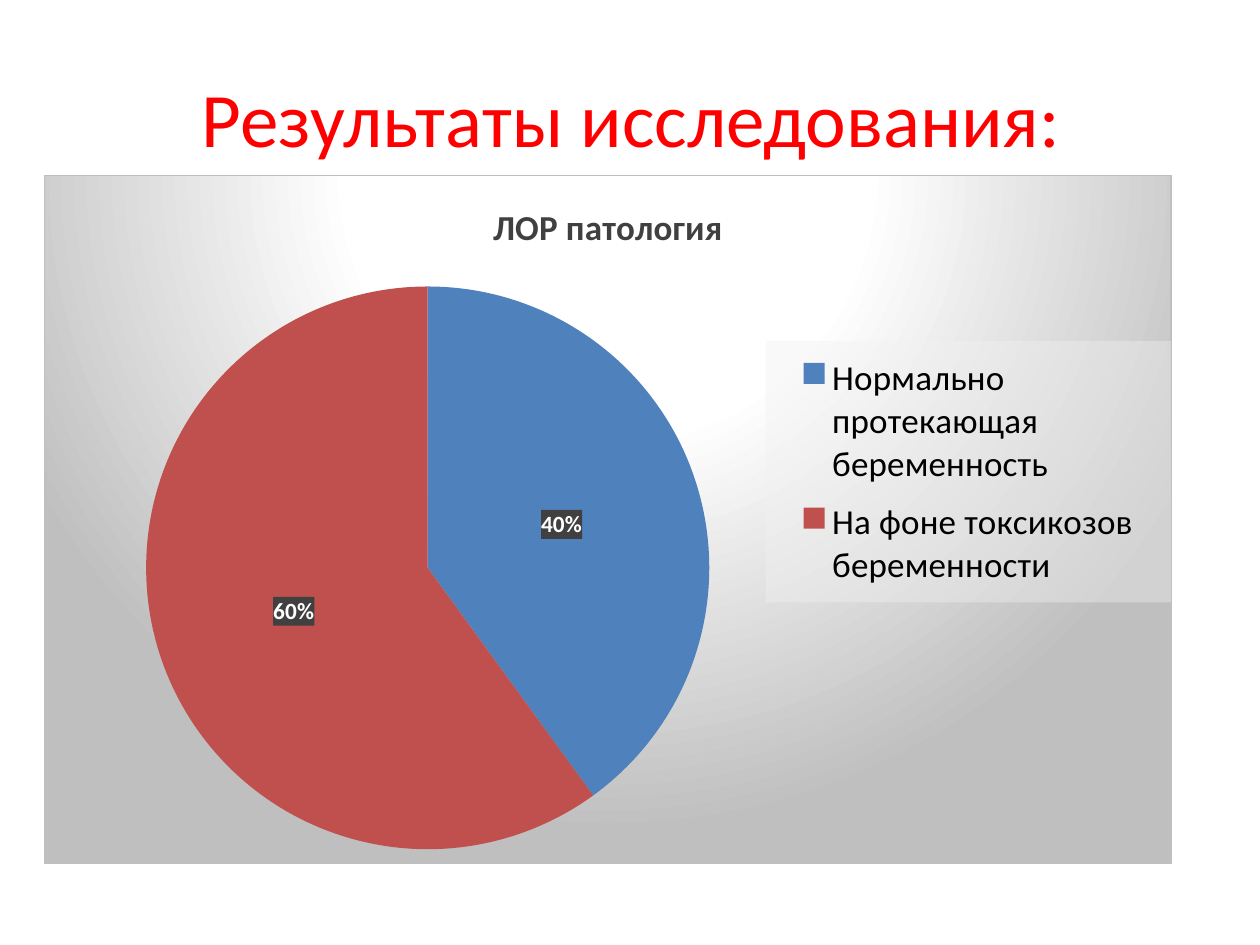
from lxml import etree
from pptx import Presentation
from pptx.chart.data import CategoryChartData
from pptx.dml.color import RGBColor
from pptx.enum.chart import XL_CHART_TYPE, XL_LABEL_POSITION as LabelPosition, XL_LEGEND_POSITION as LegendPosition
from pptx.enum.text import MSO_ANCHOR, PP_ALIGN
from pptx.oxml import parse_xml
from pptx.util import Inches, Pt

FONT = "Calibri"
NAMESPACES = (
    'xmlns:c="http://schemas.openxmlformats.org/drawingml/2006/chart" '
    'xmlns:a="http://schemas.openxmlformats.org/drawingml/2006/main"'
)


def color(hex_value):
    return RGBColor.from_string(hex_value)


def set_font(font, size, hex_value, bold=False):
    font.name = FONT
    font.size = Pt(size)
    font.bold = bold
    font.color.rgb = color(hex_value)


def chart_format(content):
    return parse_xml(f"<c:spPr {NAMESPACES}>{content}</c:spPr>")


def solid_fill(hex_value, alpha):
    return (f'<a:solidFill><a:srgbClr val="{hex_value}">'
            f'<a:alpha val="{alpha * 1000}"/></a:srgbClr></a:solidFill>')


def manual_layout(x, y, width, height, inner=False):
    """Place a chart part by fractions of the chart area."""
    target = '<c:layoutTarget val="inner"/>' if inner else ""
    sizes = "".join(f'<c:{name} val="{value}"/>' for name, value in
                    zip("xywh", (x, y, width, height)))
    return parse_xml(
        f'<c:layout {NAMESPACES}><c:manualLayout>{target}'
        f'<c:xMode val="edge"/><c:yMode val="edge"/>{sizes}'
        f'</c:manualLayout></c:layout>')


def add_title(slide, left, top, width, height):
    title = slide.shapes.title
    title.left, title.top, title.width, title.height = left, top, width, height
    title.text_frame.text = "Результаты исследования:"
    title.text_frame.vertical_anchor = MSO_ANCHOR.MIDDLE
    paragraph = title.text_frame.paragraphs[0]
    paragraph.alignment = PP_ALIGN.CENTER
    set_font(paragraph.runs[0].font, 44, "FF0000")


def format_chart_area(chart):
    """Radial grey background with a thin border."""
    stops = "".join(
        f'<a:gs pos="{position * 1000}"><a:srgbClr val="{hex_value}"/></a:gs>'
        for position, hex_value in ((0, "FFFFFF"), (39, "FFFFFF"), (100, "BFBFBF")))
    area = chart_format(
        f'<a:gradFill><a:gsLst>{stops}</a:gsLst><a:path path="circle">'
        '<a:fillToRect l="50000" t="-80000" r="50000" b="180000"/></a:path></a:gradFill>'
        f'<a:ln w="{Pt(0.75)}"><a:solidFill><a:srgbClr val="BFBFBF"/></a:solidFill></a:ln>')
    chart.element.find("{*}chart").addnext(area)


def format_legend(chart):
    chart.has_legend = True
    legend = chart.legend
    legend.position = LegendPosition.RIGHT
    legend.include_in_layout = False
    set_font(legend.font, 20, "000000")
    legend_element = chart.element.find(".//{*}legend")
    for layout in legend_element.findall("{*}layout"):
        legend_element.remove(layout)
    overlay = legend_element.find("{*}overlay")
    overlay.addprevious(manual_layout(0.64, 0.24, 0.36, 0.38))
    overlay.addnext(chart_format(solid_fill("F2F2F2", 39)))


def format_pie(chart):
    plot = chart.plots[0]
    plot.vary_by_categories = True
    for index, hex_value in enumerate(("4F81BD", "C0504D")):
        fill = plot.series[0].points[index].format.fill
        fill.solid()
        fill.fore_color.rgb = color(hex_value)

    # Percentage labels on dark boxes
    labels = plot.series[0].data_labels
    labels.show_percentage = True
    labels.show_value = False
    labels.number_format = "0%"
    labels.number_format_is_linked = False
    labels.position = LabelPosition.CENTER
    set_font(labels.font, 13.3, "FFFFFF", bold=True)
    label_format = chart.element.find(".//{*}ser/{*}dLbls/{*}numFmt")
    label_format.addnext(chart_format(solid_fill("404040", 90)))

    plot_area = chart.element.find(".//{*}plotArea")
    for layout in plot_area.findall("{*}layout"):
        plot_area.remove(layout)
    plot_area.insert(0, manual_layout(0.09, 0.16, 0.5, 0.82, inner=True))


def add_pathology_chart(slide, left, top, width, height):
    data = CategoryChartData()
    data.categories = ["Нормально протекающая беременность",
                       "На фоне токсикозов беременности"]
    data.add_series("Series 1", (40, 60))
    chart = slide.shapes.add_chart(
        XL_CHART_TYPE.PIE, left, top, width, height, data).chart
    set_font(chart.font, 10, "000000")
    chart.has_title = True
    chart.chart_title.include_in_layout = False
    title_frame = chart.chart_title.text_frame
    title_frame.text = "ЛОР патология"
    set_font(title_frame.paragraphs[0].runs[0].font, 20, "404040", bold=True)
    format_chart_area(chart)
    format_legend(chart)
    format_pie(chart)


def main():
    presentation = Presentation()
    presentation.slide_width = Inches(10)
    presentation.slide_height = Inches(7.5)
    slide = presentation.slides.add_slide(presentation.slide_layouts[5])
    add_title(slide, Inches(0.51), Inches(0.3), Inches(9), Inches(1.25))
    add_pathology_chart(slide, Inches(0.35), Inches(1.39), Inches(8.95), Inches(5.47))
    presentation.save("out.pptx")


if __name__ == "__main__":
    main()
